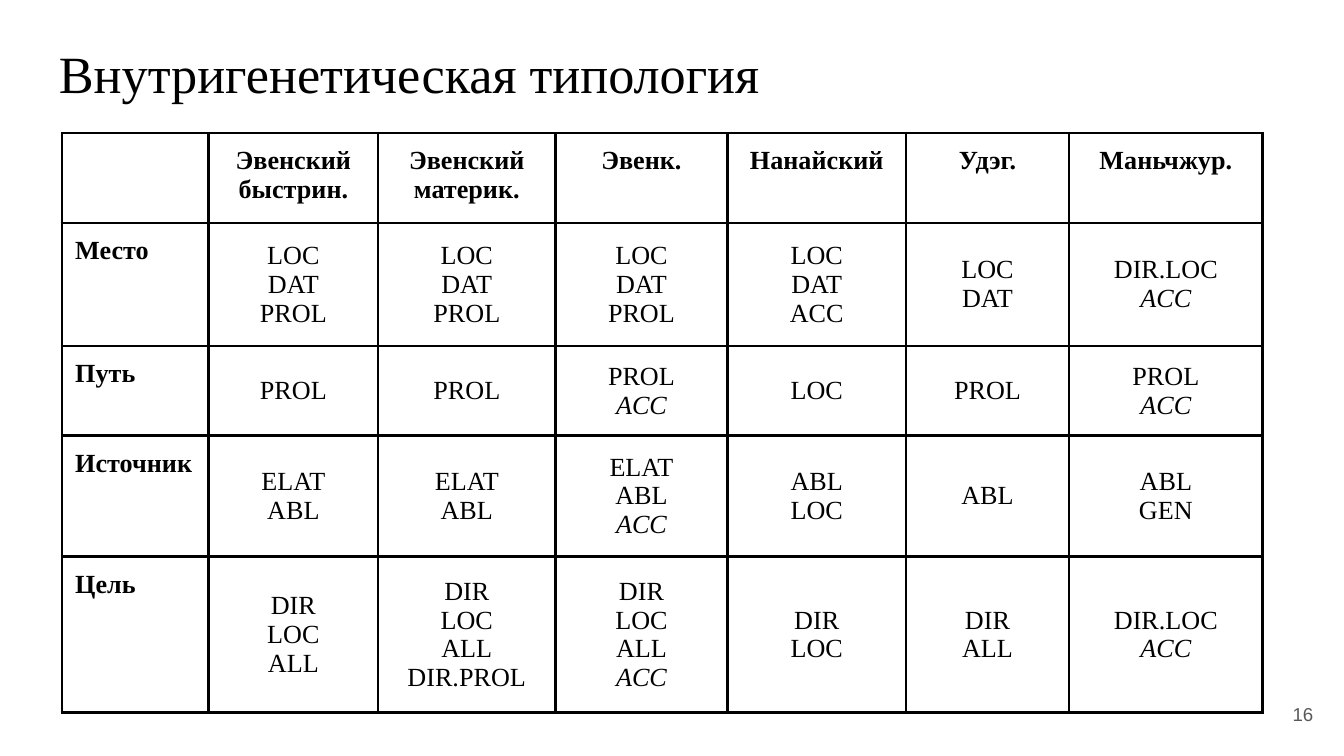
from lxml import etree
from pptx import Presentation
from pptx.dml.color import RGBColor
from pptx.enum.text import MSO_ANCHOR, PP_ALIGN
from pptx.oxml.ns import qn
from pptx.util import Pt

LEFT, CENTER, RIGHT = PP_ALIGN.LEFT, PP_ALIGN.CENTER, PP_ALIGN.RIGHT
TOP, MIDDLE = MSO_ANCHOR.TOP, MSO_ANCHOR.MIDDLE

COLORS = {"paper": "FFFFFF", "ink": "000000", "page_number": "595959"}
SERIF, SANS = "Times New Roman", "Arial"
INSET = 7.2
BORDER = 1.5

COLUMN_WIDTHS = [78.7, 90.8, 95, 92.2, 95.6, 87.4, 103.7]
ROW_HEIGHTS = [46.1, 66, 46.1, 61.2, 83.5]
ITALIC_MARK = "*"
LANGUAGES = ["", "Эвенский быстрин.", "Эвенский материк.", "Эвенк.",
             "Нанайский", "Удэг.", "Маньчжур."]
# Case markers per language, separated by spaces; a leading * means italic.
CASES = {
    "Место": ["LOC DAT PROL", "LOC DAT PROL", "LOC DAT PROL",
              "LOC DAT ACC", "LOC DAT", "DIR.LOC *ACC"],
    "Путь": ["PROL", "PROL", "PROL *ACC", "LOC", "PROL", "PROL *ACC"],
    "Источник": ["ELAT ABL", "ELAT ABL", "ELAT ABL *ACC",
                 "ABL LOC", "ABL", "ABL GEN"],
    "Цель": ["DIR LOC ALL", "DIR LOC ALL DIR.PROL", "DIR LOC ALL *ACC",
             "DIR LOC", "DIR ALL", "DIR.LOC *ACC"],
}


def write(frame, lines, size=14, font=SERIF, color="ink", bold=False, align=LEFT):
    """Write one paragraph per line; a marked line is italic."""
    frame.word_wrap = True
    for index, line in enumerate(lines):
        para = frame.paragraphs[0] if index == 0 else frame.add_paragraph()
        para.alignment = align
        span = para.add_run()
        span.text = line.removeprefix(ITALIC_MARK)
        span.font.name = font
        span.font.size = Pt(size)
        span.font.bold = bold
        span.font.italic = line.startswith(ITALIC_MARK)
        span.font.color.rgb = RGBColor.from_string(COLORS[color])


def set_insets(holder):
    holder.margin_left = holder.margin_right = Pt(INSET)
    holder.margin_top = holder.margin_bottom = Pt(INSET)


def add_label(page, box, text, anchor=TOP, **text_format):
    frame = page.shapes.add_textbox(*map(Pt, box)).text_frame
    set_insets(frame)
    frame.vertical_anchor = anchor
    write(frame, [text], **text_format)


def style_cell(cell, anchor):
    set_insets(cell)
    cell.vertical_anchor = anchor
    properties = cell._tc.get_or_add_tcPr()
    for side in ("a:lnL", "a:lnR", "a:lnT", "a:lnB"):
        line = etree.SubElement(properties, qn(side), w=str(Pt(BORDER)))
        fill = etree.SubElement(line, qn("a:solidFill"))
        etree.SubElement(fill, qn("a:srgbClr"), val=COLORS["ink"])
    cell.fill.solid()
    cell.fill.fore_color.rgb = RGBColor.from_string(COLORS["paper"])


def add_case_table(page, left, top):
    rows = [LANGUAGES] + [[role, *cases] for role, cases in CASES.items()]
    table = page.shapes.add_table(
        len(rows), len(LANGUAGES), Pt(left), Pt(top),
        Pt(sum(COLUMN_WIDTHS)), Pt(sum(ROW_HEIGHTS))).table
    table.first_row = table.horz_banding = False
    for column, width in zip(table.columns, COLUMN_WIDTHS):
        column.width = Pt(width)
    for row, height in zip(table.rows, ROW_HEIGHTS):
        row.height = Pt(height)

    for row_index, texts in enumerate(rows):
        for column_index, text in enumerate(texts):
            cell = table.cell(row_index, column_index)
            is_heading = row_index == 0 or column_index == 0
            style_cell(cell, TOP if is_heading else MIDDLE)
            if text:
                write(cell.text_frame, [text] if is_heading else text.split(),
                      bold=is_heading, align=CENTER if column_index else LEFT)


def main():
    deck = Presentation()
    deck.slide_width, deck.slide_height = Pt(720), Pt(405)
    page = deck.slides.add_slide(deck.slide_layouts[6])
    page.background.fill.solid()
    page.background.fill.fore_color.rgb = RGBColor.from_string(COLORS["paper"])

    add_label(page, (24.5, 15.1, 671, 45.4), "Внутригенетическая типология", size=28)
    add_case_table(page, 33.1, 71.3)
    add_label(page, (667.4, 367.2, 43.2, 31), "16", anchor=MIDDLE,
              size=10, font=SANS, color="page_number", align=RIGHT)
    deck.save("out.pptx")


if __name__ == "__main__":
    main()
